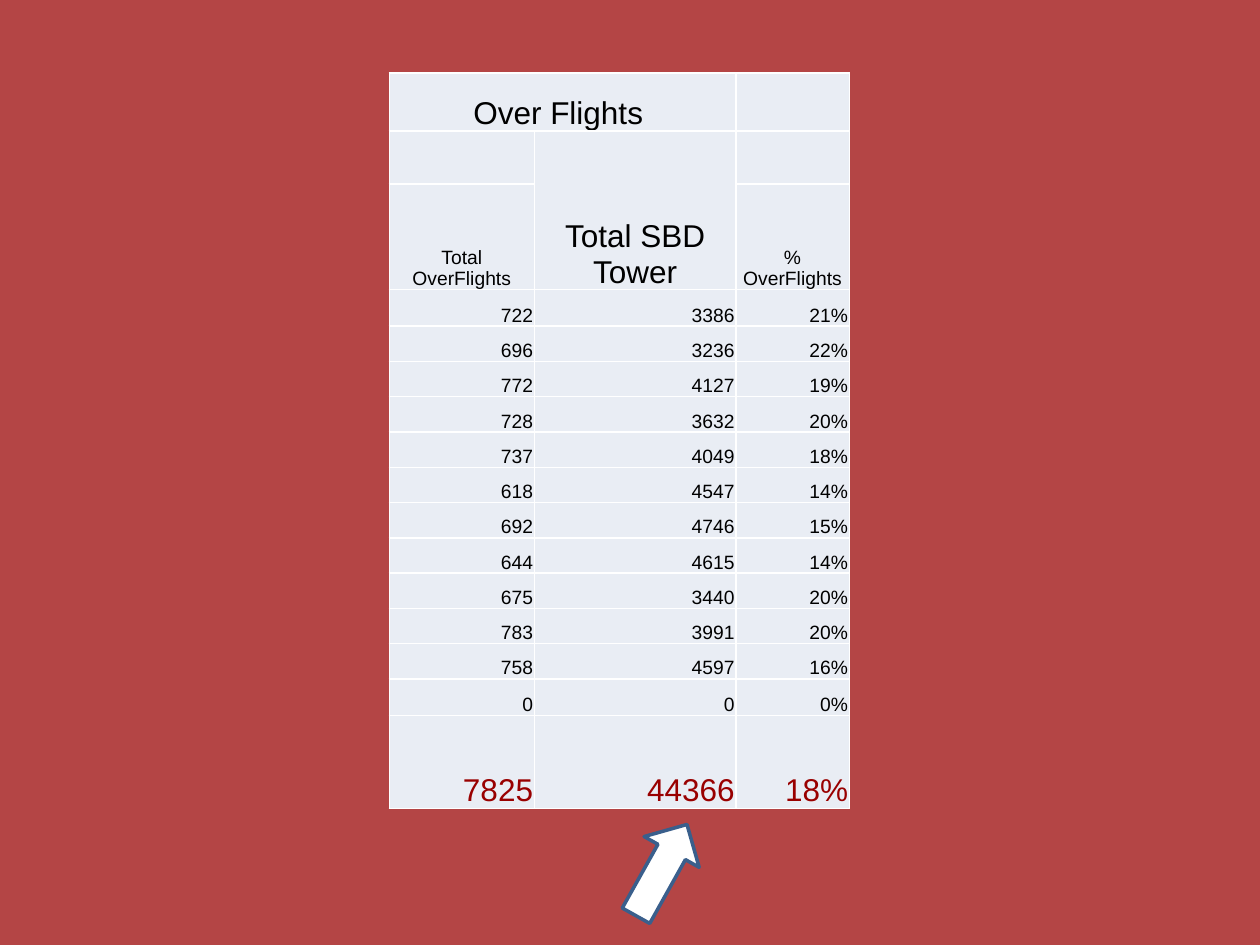
from lxml import etree
from pptx import Presentation
from pptx.dml import color
from pptx.enum import shapes, text
from pptx.oxml import ns
from pptx.util import Inches, Pt

COLS = [1.15, 1.6, 0.9]
ROWS = [0.46, 0.42, 0.84, 0.29] + [0.28] * 10 + [0.29, 0.74]
FLIGHTS = [
    (722, 3386, "21%"), (696, 3236, "22%"), (772, 4127, "19%"),
    (728, 3632, "20%"), (737, 4049, "18%"), (618, 4547, "14%"),
    (692, 4746, "15%"), (644, 4615, "14%"), (675, 3440, "20%"),
    (783, 3991, "20%"), (758, 4597, "16%"), (0, 0, "0%"),
]
TOTALS = (7825, 44366, "18%")
CENTER, RIGHT = text.PP_ALIGN.CENTER, text.PP_ALIGN.RIGHT


def paint(fill, value):
    """Give a fill one solid colour."""
    fill.solid()
    fill.fore_color.rgb = color.RGBColor.from_string(value)


def set_background(s, value, alpha):
    """Fill the slide background with a partly transparent colour."""
    fill = s.background.fill
    paint(fill, value)
    clr = s.background._cSld.find(".//" + ns.qn("a:srgbClr"))
    etree.SubElement(clr, ns.qn("a:alpha"), val=str(alpha * 1000))


def style_cell(cell, value, line):
    """Set the borders and fill of a cell."""
    tcPr = cell._tc.get_or_add_tcPr()
    for side in ("lnL", "lnR", "lnT", "lnB"):
        ln = etree.SubElement(tcPr, ns.qn("a:" + side), w=str(Pt(1)))
        fill = etree.SubElement(ln, ns.qn("a:solidFill"))
        etree.SubElement(fill, ns.qn("a:srgbClr"), val=line)
    paint(cell.fill, value)


def write_cell(cell, words, size, align, value="000000"):
    """Write one line of bottom-anchored text in a cell."""
    layout = {
        "vertical_anchor": text.MSO_ANCHOR.BOTTOM,
        "margin_left": Inches(0.01), "margin_right": Inches(0.01),
        "margin_top": Inches(0.01), "margin_bottom": 0,
    }
    for name, setting in layout.items():
        setattr(cell, name, setting)
    p = cell.text_frame.paragraphs[0]
    p.alignment = align
    r = p.add_run()
    r.text = str(words)
    for name, setting in {"size": Pt(size), "name": "Arial"}.items():
        setattr(r.font, name, setting)
    paint(r.font.fill, value)


def add_flight_table(s, left, top, width, height):
    """Place the over-flight table in the given box."""
    frame = s.shapes.add_table(len(ROWS), len(COLS), left, top, width, height)
    table = frame.table
    table.first_row = table.horz_banding = False
    for col, size in zip(table.columns, COLS):
        col.width = Inches(size)
    for row, size in zip(table.rows, ROWS):
        row.height = Inches(size)
    for cell in table.iter_cells():
        style_cell(cell, "E9EDF4", "FFFFFF")
    table.cell(0, 0).merge(table.cell(0, 1))
    table.cell(1, 1).merge(table.cell(2, 1))
    headings = [
        (0, 0, "Over Flights ", 18), (1, 1, "Total SBD Tower", 18),
        (2, 0, "Total OverFlights", 11), (2, 2, "% OverFlights", 11),
    ]
    for row, col, words, size in headings:
        write_cell(table.cell(row, col), words, size, CENTER)
    for row, values in enumerate(FLIGHTS, 3):
        for col, value in enumerate(values):
            write_cell(table.cell(row, col), value, 11, RIGHT)
    for col, value in enumerate(TOTALS):
        write_cell(table.cell(len(ROWS) - 1, col), value, 18, RIGHT, "990000")


def add_total_arrow(s, left, top, width, height):
    """Place the arrow that points at the tower total."""
    sp = s.shapes.add_shape(shapes.MSO_SHAPE.DOWN_ARROW, left, top, width, height)
    sp.rotation = 209.2
    sp.shadow.inherit = False
    paint(sp.fill, "FFFFFF")
    paint(sp.line.fill, "3A5F8C")
    sp.line.width = Pt(2)


def main():
    """Build and save the slide."""
    prs = Presentation()
    prs.slide_width, prs.slide_height = Inches(10), Inches(7.5)
    s = prs.slides.add_slide(prs.slide_layouts[6])
    set_background(s, "990000", 73)
    add_flight_table(s, Inches(3.09), Inches(0.58), Inches(3.65), Inches(5.82))
    add_total_arrow(s, Inches(5), Inches(6.49), Inches(0.5), Inches(0.83))
    prs.save("out.pptx")


if __name__ == "__main__":
    main()
